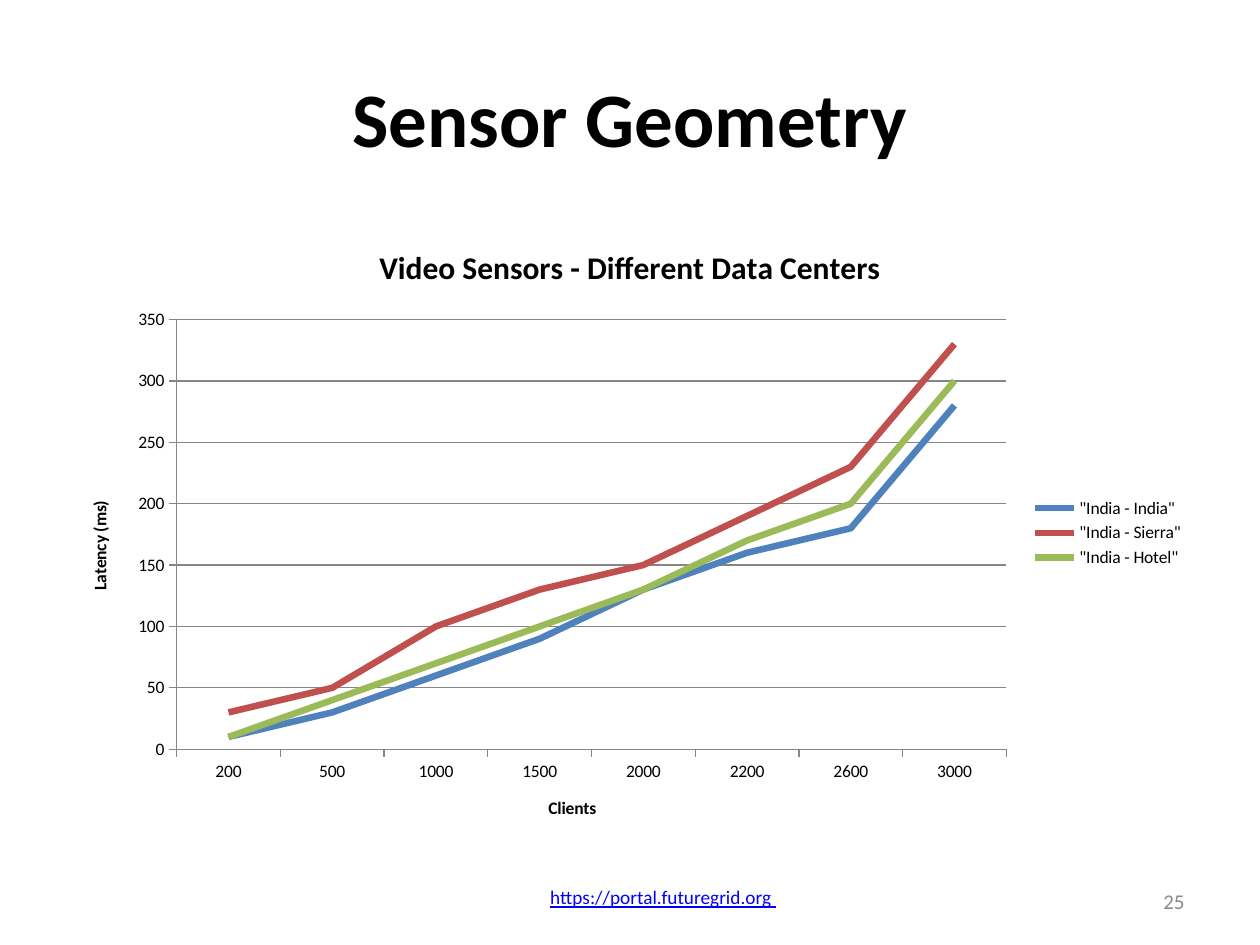
from pptx import Presentation
from pptx.chart.data import CategoryChartData
from pptx.dml.color import RGBColor
from pptx.enum.chart import XL_CHART_TYPE as ChartType
from pptx.enum.chart import XL_LEGEND_POSITION as LegendPosition
from pptx.enum.chart import XL_TICK_MARK as TickMark
from pptx.enum.text import MSO_ANCHOR as Anchor
from pptx.enum.text import PP_ALIGN as Align
from pptx.util import Pt

PX_PER_INCH = 126
EMU_PER_INCH = 914400
FONT = "Calibri"

BLACK = RGBColor(0x00, 0x00, 0x00)
GRAY = RGBColor(0x89, 0x89, 0x89)
AXIS_GRAY = RGBColor(0x86, 0x86, 0x86)
LINK_BLUE = RGBColor(0x00, 0x00, 0xFF)
BLUE = RGBColor(0x4F, 0x81, 0xBD)
RED = RGBColor(0xC0, 0x50, 0x4D)
GREEN = RGBColor(0x9B, 0xBB, 0x59)

CLIENTS = ["200", "500", "1000", "1500", "2000", "2200", "2600", "3000"]
LATENCIES = [
    ('"India - India"', BLUE, [10, 30, 60, 90, 130, 160, 180, 280]),
    ('"India - Sierra"', RED, [30, 50, 100, 130, 150, 190, 230, 330]),
    ('"India - Hotel"', GREEN, [10, 40, 70, 100, 130, 170, 200, 300]),
]


def px(length):
    return round(length * EMU_PER_INCH / PX_PER_INCH)


class SlideBuilder:
    def __init__(self, page):
        self.page = page

    def style(self, font, size, color=BLACK, bold=False, underline=False):
        font.name = FONT
        font.size = Pt(size)
        font.color.rgb = color
        font.bold = bold
        font.underline = underline

    def text(self, bounds, words, align, size, **look):
        box = self.page.shapes.add_textbox(*map(px, bounds))
        frame = box.text_frame
        frame.word_wrap = True
        frame.vertical_anchor = Anchor.MIDDLE
        para = frame.paragraphs[0]
        para.alignment = align
        span = para.add_run()
        span.text = words
        self.style(span.font, size, **look)

    def heading(self, owner, words, size):
        """Title a chart or one of its axes."""
        title = owner.axis_title if hasattr(owner, "axis_title") else owner.chart_title
        span = title.text_frame.paragraphs[0].add_run()
        span.text = words
        self.style(span.font, size, bold=True)

    def axis(self, axis, title):
        axis.major_tick_mark = TickMark.OUTSIDE
        axis.minor_tick_mark = TickMark.NONE
        axis.format.line.color.rgb = AXIS_GRAY
        axis.format.line.width = Pt(0.75)
        self.style(axis.tick_labels.font, 10)
        self.heading(axis, title, 10)

    def line_chart(self, bounds, title, categories, series, axis_titles):
        data = CategoryChartData()
        data.categories = categories
        for name, _, values in series:
            data.add_series(name, values)
        chart = self.page.shapes.add_chart(
            ChartType.LINE, *map(px, bounds), data).chart
        self.style(chart.font, 10)
        self.heading(chart, title, 18)

        # Axes and gridlines
        for axis, words in zip((chart.category_axis, chart.value_axis), axis_titles):
            self.axis(axis, words)
        scale = chart.value_axis
        scale.minimum_scale, scale.maximum_scale, scale.major_unit = 0, 350, 50
        scale.has_major_gridlines = True
        scale.major_gridlines.format.line.color.rgb = AXIS_GRAY
        scale.major_gridlines.format.line.width = Pt(0.75)

        # Legend
        chart.has_legend = True
        chart.legend.position = LegendPosition.RIGHT
        chart.legend.include_in_layout = False
        self.style(chart.legend.font, 10)

        # Lines
        chart.plots[0].vary_by_categories = False
        for line, (_, color, _) in zip(chart.plots[0].series, series):
            line.smooth = False
            line.format.line.color.rgb = color
            line.format.line.width = Pt(3.75)


def main():
    deck = Presentation()
    deck.slide_width, deck.slide_height = px(1260), px(945)
    slide = SlideBuilder(deck.slides.add_slide(deck.slide_layouts[6]))

    # Title
    slide.text((63, 38, 1134, 158), "Sensor Geometry", Align.CENTER, 44, bold=True)

    # Latency by number of clients
    slide.line_chart((63, 221, 1134, 624), "Video Sensors - Different Data Centers",
                     CLIENTS, LATENCIES, ("Clients", "Latency (ms)"))

    # Footer
    slide.text((433, 872, 460, 50), "https://portal.futuregrid.org ", Align.CENTER, 11,
               color=LINK_BLUE, underline=True)
    slide.text((903, 876, 294, 50), "25", Align.RIGHT, 12, color=GRAY)

    deck.save("out.pptx")


if __name__ == "__main__":
    main()
